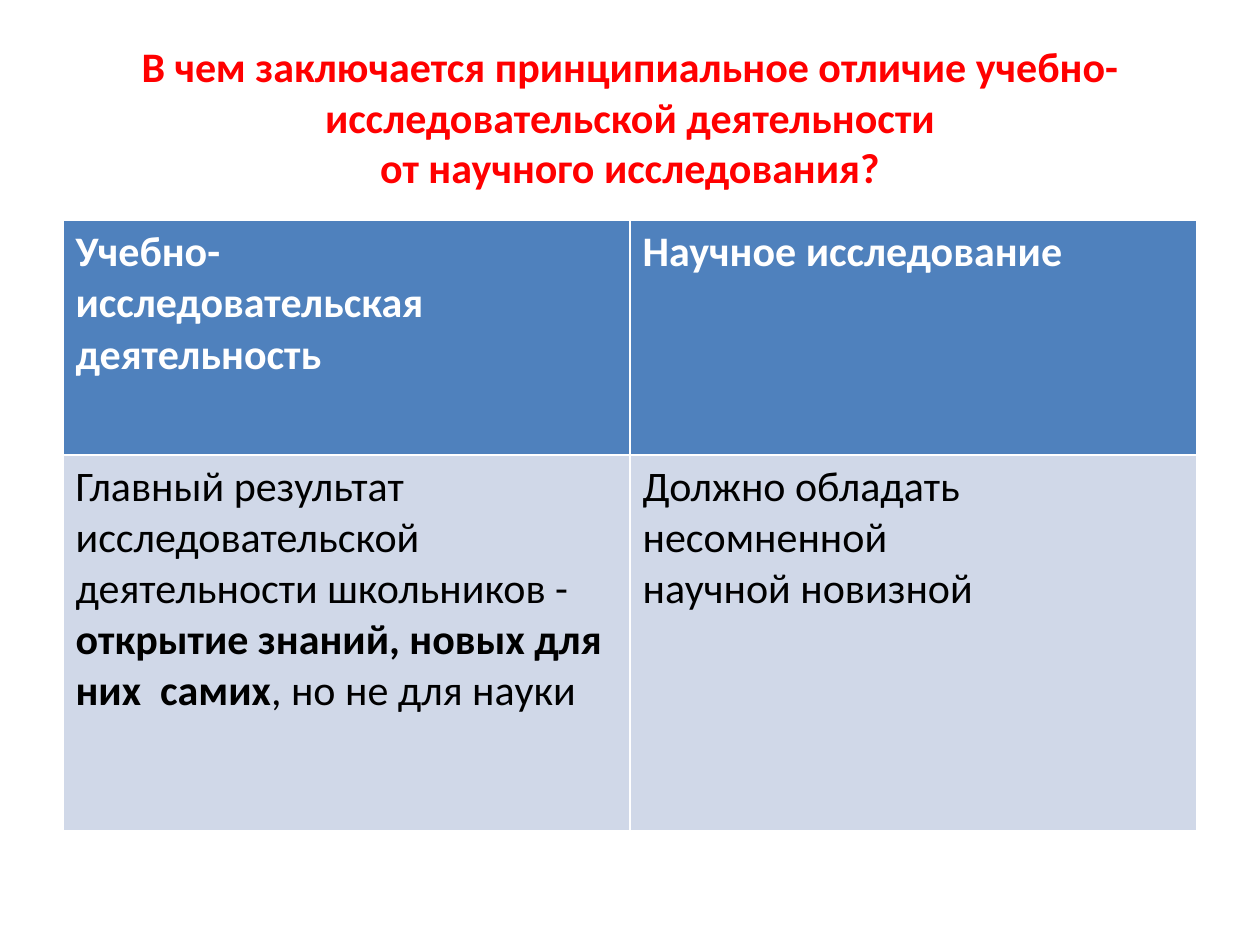
from dataclasses import dataclass

from pptx import Presentation
from pptx.dml import color
from pptx.enum import text
from pptx.table import _Cell
from pptx.text.text import _Paragraph
from pptx.util import Inches, Pt

COLORS = {
    "title": "FF0000",
    "header_fill": "4F81BD",
    "header_text": "FFFFFF",
    "body_fill": "D0D8E8",
    "body_text": "000000",
}
FONT = "Calibri"
FONT_SIZE = Pt(24)


@dataclass(frozen=True)
class Span:
    words: str
    bold: bool = False


@dataclass(frozen=True)
class Row:
    height: float
    role: str
    cells: list[list[list[Span]]]


ROWS = [
    Row(1.86, "header", [
        [[Span("Учебно-", True)],
         [Span("исследовательская деятельность", True)]],
        [[Span("Научное исследование", True)]],
    ]),
    Row(2.98, "body", [
        [[Span("Главный результат")],
         [Span("исследовательской")],
         [Span("деятельности школьников - "),
          Span("открытие знаний, новых для них  самих", True),
          Span(", но не для науки")]],
        [[Span("Должно обладать несомненной")],
         [Span("научной новизной")]],
    ]),
]


def rgb(name: str) -> color.RGBColor:
    return color.RGBColor.from_string(COLORS[name])


def style_paragraph(paragraph: _Paragraph, color_name: str) -> None:
    paragraph.font.name = FONT
    paragraph.font.size = FONT_SIZE
    paragraph.font.color.rgb = rgb(color_name)


def fill_cell(cell: _Cell, lines: list[list[Span]], role: str) -> None:
    cell.fill.solid()
    cell.fill.fore_color.rgb = rgb(f"{role}_fill")
    frame = cell.text_frame
    for number, spans in enumerate(lines):
        paragraph = frame.add_paragraph() if number else frame.paragraphs[0]
        style_paragraph(paragraph, f"{role}_text")
        for span in spans:
            run = paragraph.add_run()
            run.text = span.words
            if len(spans) > 1:
                run.font.bold = span.bold
        if len(spans) == 1:
            paragraph.font.bold = spans[0].bold


def main() -> None:
    deck = Presentation()
    deck.slide_width, deck.slide_height = Inches(10), Inches(7.5)
    slide = deck.slides.add_slide(deck.slide_layouts[5])

    question = slide.shapes.title
    question.left, question.top = Inches(0.5), Inches(0.3)
    question.width, question.height = Inches(9), Inches(1.25)
    question.text_frame.text = (
        "В чем заключается принципиальное отличие учебно-исследовательской "
        "деятельности\vот научного исследования?"
    )
    question.text_frame.auto_size = text.MSO_AUTO_SIZE.NONE
    question.text_frame.vertical_anchor = text.MSO_ANCHOR.MIDDLE
    heading = question.text_frame.paragraphs[0]
    heading.alignment = text.PP_ALIGN.CENTER
    heading.font.bold = True
    style_paragraph(heading, "title")

    comparison = slide.shapes.add_table(
        len(ROWS), 2, Inches(0.5), Inches(1.75), Inches(9),
        Inches(sum(row.height for row in ROWS)),
    ).table
    for index, row in enumerate(ROWS):
        comparison.rows[index].height = Inches(row.height)
        for column, lines in enumerate(row.cells):
            fill_cell(comparison.cell(index, column), lines, row.role)

    deck.save("out.pptx")


if __name__ == "__main__":
    main()
